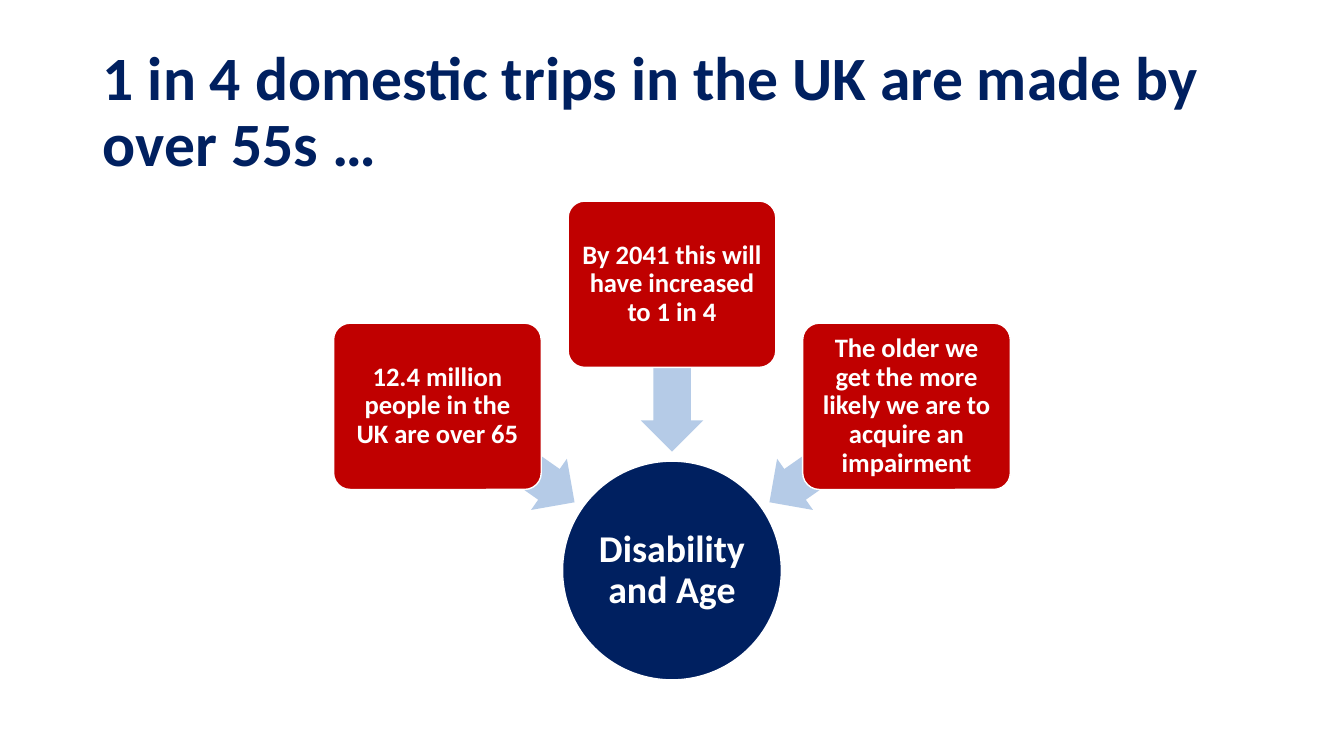
import math

from pptx import Presentation, util as u
from pptx.dml.color import RGBColor
from pptx.enum import shapes, text

WIDTH, HEIGHT = 13.33, 7.5
NAVY, RED, PALE_BLUE, WHITE = "002060", "C00000", "B5CBE7", "FFFFFF"
HUB = (WIDTH / 2, 5.66)
HUB_SIZE = (2.17, 2.17)
ARROW_SIZE, ARROW_RADIUS = (1.66, 0.62), 2.01
FACT_SIZE, FACT_RADIUS = (2.06, 1.65), 2.84
FACTS = {
    215: "12.4 million people in the UK are over 65",
    270: "By 2041 this will have increased to 1 in 4",
    325: "The older we get the more likely we are to acquire an impairment",
}


def colour(hex_string):
    return RGBColor.from_string(hex_string)


def write(shape, wording, size, color=WHITE, align=text.PP_ALIGN.CENTER, inset=0.09):
    frame = shape.text_frame
    frame.word_wrap = True
    frame.auto_size = text.MSO_AUTO_SIZE.NONE
    frame.vertical_anchor = text.MSO_ANCHOR.MIDDLE
    frame.margin_left = frame.margin_right = u.Inches(inset)
    frame.margin_top = frame.margin_bottom = u.Inches(min(inset, 0.05))
    paragraph = frame.paragraphs[0]
    paragraph.alignment = align
    paragraph.line_spacing = 0.9
    run = paragraph.add_run()
    run.text = wording
    run.font.name = "Calibri"
    run.font.size = u.Pt(size)
    run.font.bold = True
    run.font.color.rgb = colour(color)


def around_hub(angle, radius):
    """Point at a clockwise angle from the hub's right-hand side."""
    turn = math.radians(angle)
    return HUB[0] + radius * math.cos(turn), HUB[1] + radius * math.sin(turn)


def add_centred(slide, kind, centre, size, fill, outline=None, adjustments=()):
    left, top = (c - s / 2 for c, s in zip(centre, size))
    shape = slide.shapes.add_shape(kind, *map(u.Inches, (left, top, *size)))
    shape.shadow.inherit = False
    shape.fill.solid()
    shape.fill.fore_color.rgb = colour(fill)
    if outline:
        shape.line.color.rgb = colour(outline)
        shape.line.width = u.Pt(1)
    else:
        shape.line.fill.background()
    for index, value in enumerate(adjustments):
        shape.adjustments[index] = value
    return shape


def add_title(slide, wording):
    title = slide.shapes.title
    title.left, title.top = u.Inches(0.92), u.Inches(0.4)
    title.width, title.height = u.Inches(11.5), u.Inches(1.45)
    write(title, wording, 44, color=NAVY, align=text.PP_ALIGN.LEFT, inset=0.1)


def add_hub(slide, wording):
    hub = add_centred(slide, shapes.MSO_SHAPE.OVAL, HUB, HUB_SIZE, NAVY, WHITE)
    write(hub, wording, 27, inset=0.02)


def add_spoke(slide, angle, wording):
    """Arrow pointing at the hub, with its fact box at the outer end."""
    arrow = add_centred(slide, shapes.MSO_SHAPE.LEFT_ARROW,
                        around_hub(angle, ARROW_RADIUS), ARROW_SIZE,
                        PALE_BLUE, adjustments=(0.6, 0.5))
    arrow.rotation = angle
    fact = add_centred(slide, shapes.MSO_SHAPE.ROUNDED_RECTANGLE,
                       around_hub(angle, FACT_RADIUS), FACT_SIZE,
                       RED, WHITE, adjustments=(0.1,))
    write(fact, wording, 19)


def main():
    deck = Presentation()
    deck.slide_width, deck.slide_height = u.Inches(WIDTH), u.Inches(HEIGHT)
    slide = deck.slides.add_slide(deck.slide_layouts.get_by_name("Title Only"))
    add_title(slide, "1 in 4 domestic trips in the UK are made by over 55s …")
    add_hub(slide, "Disability and Age")
    for angle, wording in FACTS.items():
        add_spoke(slide, angle, wording)
    deck.save("out.pptx")


if __name__ == "__main__":
    main()
